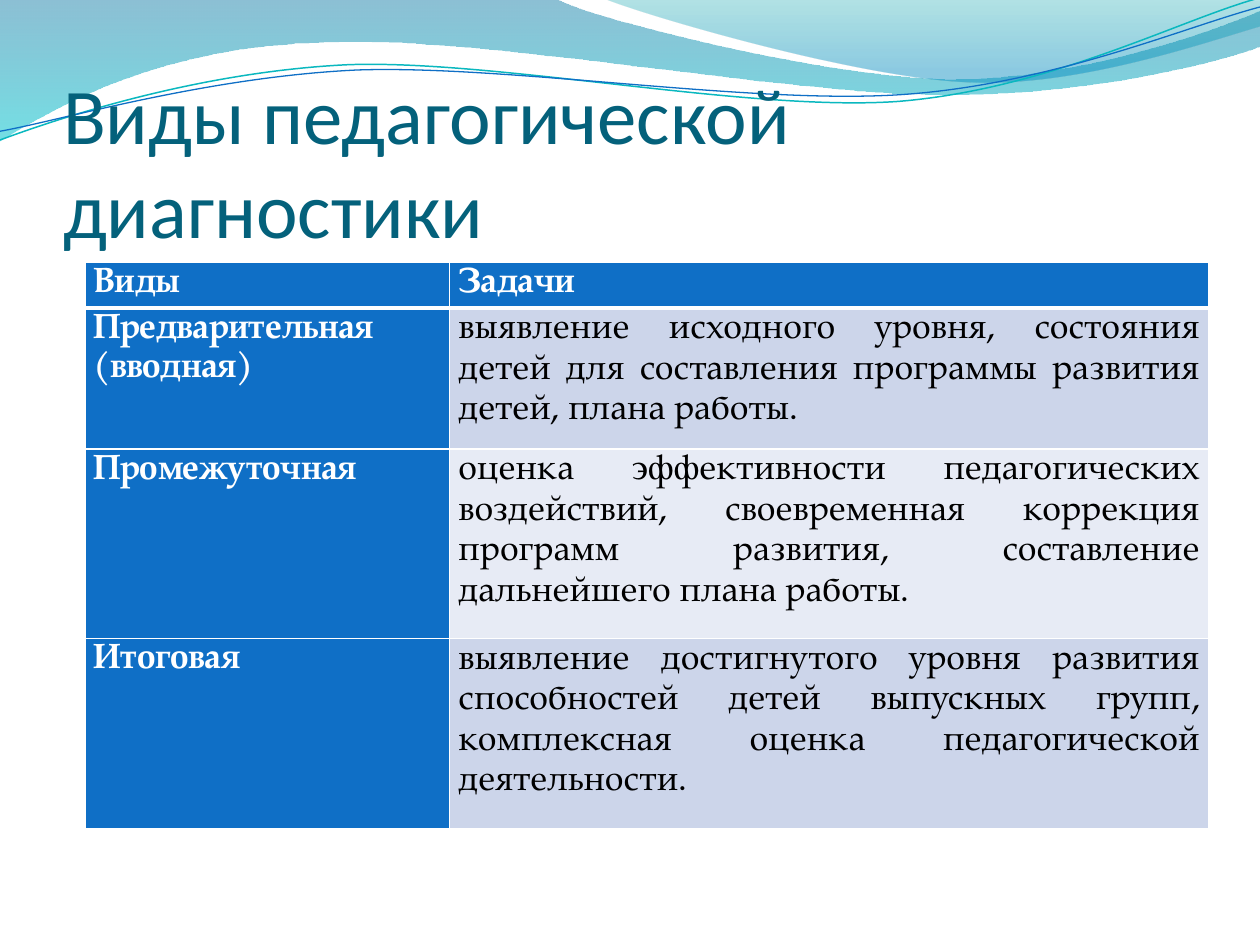
from dataclasses import dataclass

from pptx import Presentation
from pptx.dml.color import RGBColor as Color
from pptx.enum.text import MSO_ANCHOR as Anchor, MSO_AUTO_SIZE as AutoSize, PP_ALIGN as Align
from pptx.oxml.ns import qn
from pptx.oxml.xmlchemy import OxmlElement as Element
from pptx.util import Pt


@dataclass(frozen=True)
class Theme:
    title_font: str = "Calibri"
    table_font: str = "TeX Gyre Pagella"
    title_size: int = 45
    table_size: int = 20
    title: str = "04617B"
    accent: str = "0F6FC6"
    teal: str = "0AB8BF"
    light: str = "FFFFFF"
    dark: str = "000000"
    bands: tuple = ("CCD5EA", "E7EBF5")
    wide_wave: tuple = ((0, "0074A1", 45), (1, "00C6CF", 55))
    corner_wave: tuple = ((0, "00A1A9", 30), (0.8, "008BBF", 45))


def assign(target, values):
    for name, value in values.items():
        setattr(target, name, value)


def add_child(parent, tag, **attributes):
    child = Element(tag)
    for name, value in attributes.items():
        child.set(name, str(value))
    parent.append(child)
    return child


class SlideBuilder:
    def __init__(self, slide, theme):
        self.slide = slide
        self.theme = theme

    def curve(self, start, segments, close):
        values = [Pt(value) for segment in segments for value in segment]
        points = list(zip(values[::2], values[1::2]))
        builder = self.slide.shapes.build_freeform(Pt(start[0]), Pt(start[1]))
        builder.add_line_segments(points, close=close)
        shape = builder.convert_to_shape()
        shape.shadow.inherit = False
        lines = iter(list(shape.element.iter(qn("a:lnTo"))))
        for segment in segments:
            parts = [next(lines) for _ in range(len(segment) // 2)]
            if len(parts) == 3:
                bezier = Element("a:cubicBezTo")
                parts[0].addprevious(bezier)
                for part in parts:
                    bezier.append(part[0])
                    part.getparent().remove(part)
        return shape

    def wave(self, start, segments, stops):
        shape = self.curve(start, segments, True)
        shape.line.fill.background()
        shape.fill.gradient()
        shape.fill.gradient_angle = 270
        for stop, (position, color, _) in zip(shape.fill.gradient_stops, stops):
            stop.position = position
            stop.color.rgb = Color.from_string(color)
        for node, (_, _, opacity) in zip(shape.element.iter(qn("a:srgbClr")), stops):
            add_child(node, "a:alpha", val=opacity * 1000)

    def stroke(self, start, segments, color, width):
        shape = self.curve(start, segments, False)
        shape.fill.background()
        shape.line.color.rgb = Color.from_string(color)
        shape.line.width = Pt(width)

    def set_text(self, frame, text, font, size, color, bold, paragraph_format):
        frame.text = text
        paragraph = frame.paragraphs[0]
        assign(paragraph, paragraph_format)
        run_font = paragraph.runs[0].font
        assign(run_font, {"name": font, "size": Pt(size), "bold": bold})
        run_font.color.rgb = Color.from_string(color)

    def title(self, text, left, top, width, height):
        shape = self.slide.shapes.title
        assign(shape, {"left": Pt(left), "top": Pt(top),
                       "width": Pt(width), "height": Pt(height)})
        assign(shape.text_frame, {
            "margin_left": 0, "margin_right": 0, "margin_top": Pt(3.6),
            "margin_bottom": 0, "word_wrap": True,
            "vertical_anchor": Anchor.BOTTOM, "auto_size": AutoSize.NONE})
        self.set_text(shape.text_frame, text, self.theme.title_font, self.theme.title_size,
                      self.theme.title, False, {"alignment": Align.LEFT})
        shape.element.getparent().append(shape.element)

    def border(self, cell, widths):
        properties = cell._tc.get_or_add_tcPr()
        for side, width in widths.items():
            line = add_child(properties, f"a:ln{side}", w=Pt(width))
            fill = add_child(line, "a:solidFill")
            add_child(fill, "a:srgbClr", val=self.theme.light)

    def table(self, rows, left, top, columns, heights):
        theme = self.theme
        table = self.slide.shapes.add_table(
            len(rows), len(columns), Pt(left), Pt(top),
            Pt(sum(columns)), Pt(sum(heights))).table
        table.horz_banding = False
        table.first_col = True
        for column, width in zip(table.columns, columns):
            column.width = Pt(width)
        for row, height in zip(table.rows, heights):
            row.height = Pt(height)
        for row_index, texts in enumerate(rows):
            for column_index, text in enumerate(texts):
                cell = table.cell(row_index, column_index)
                heading = row_index == 0 or column_index == 0
                assign(cell, {"margin_left": Pt(5), "margin_right": Pt(5),
                              "margin_top": 0, "margin_bottom": 0,
                              "vertical_anchor": Anchor.TOP})
                self.border(cell, {"L": 1, "R": 1, "T": 3 if row_index == 1 else 1,
                                   "B": 3 if row_index == 0 else 1})
                cell.fill.solid()
                cell.fill.fore_color.rgb = Color.from_string(
                    theme.accent if heading else theme.bands[(row_index - 1) % 2])
                self.set_text(cell.text_frame, text, theme.table_font, theme.table_size,
                              theme.light if heading else theme.dark, heading,
                              {"alignment": Align.JUSTIFY, "line_spacing": 1.15})


def main():
    theme = Theme()
    presentation = Presentation()
    assign(presentation, {"slide_width": Pt(720), "slide_height": Pt(540)})
    slide = presentation.slides.add_slide(presentation.slide_layouts[5])
    builder = SlideBuilder(slide, theme)

    builder.wave((0, 0), [
        (317, -1), (343, 12, 478, 45, 546, 45), (614, 45, 690, 19, 720, 6),
        (721, 26), (708, 32, 626, 55, 537, 54), (447, 54, 275, 20, 185, 24),
        (93, 26, 33, 60, -1, 81)], theme.wide_wave)
    builder.wave((345, -1), [
        (366, 8, 491, 45, 554, 47), (616, 50, 692, 23, 720, 15), (720, 0)],
        theme.corner_wave)
    builder.stroke((0, 80), [
        (35, 67, 114, 41, 199, 37), (284, 34, 427, 64, 513, 58),
        (600, 51, 675, 11, 719, -1)], theme.teal, 0.85)
    builder.stroke((0, 75), [
        (34, 69, 118, 44, 204, 40), (290, 37, 430, 60, 516, 54),
        (602, 48, 678, 15, 720, 4)], theme.accent, 0.75)

    builder.title("Виды педагогической диагностики", 36, 55.5, 648, 90)
    builder.table([
        ("Виды", "Задачи"),
        ("Предварительная (вводная)",
         "выявление исходного уровня, состояния детей для составления программы "
         "развития детей, плана работы."),
        ("Промежуточная",
         "оценка эффективности педагогических воздействий, своевременная коррекция "
         "программ развития, составление дальнейшего плана работы."),
        ("Итоговая",
         "выявление достигнутого уровня развития способностей детей выпускных групп, "
         "комплексная оценка педагогической деятельности."),
    ], 48.5, 150, (208.5, 433.5), (26, 80.5, 108.5, 108.5))
    presentation.save("out.pptx")


if __name__ == "__main__":
    main()
